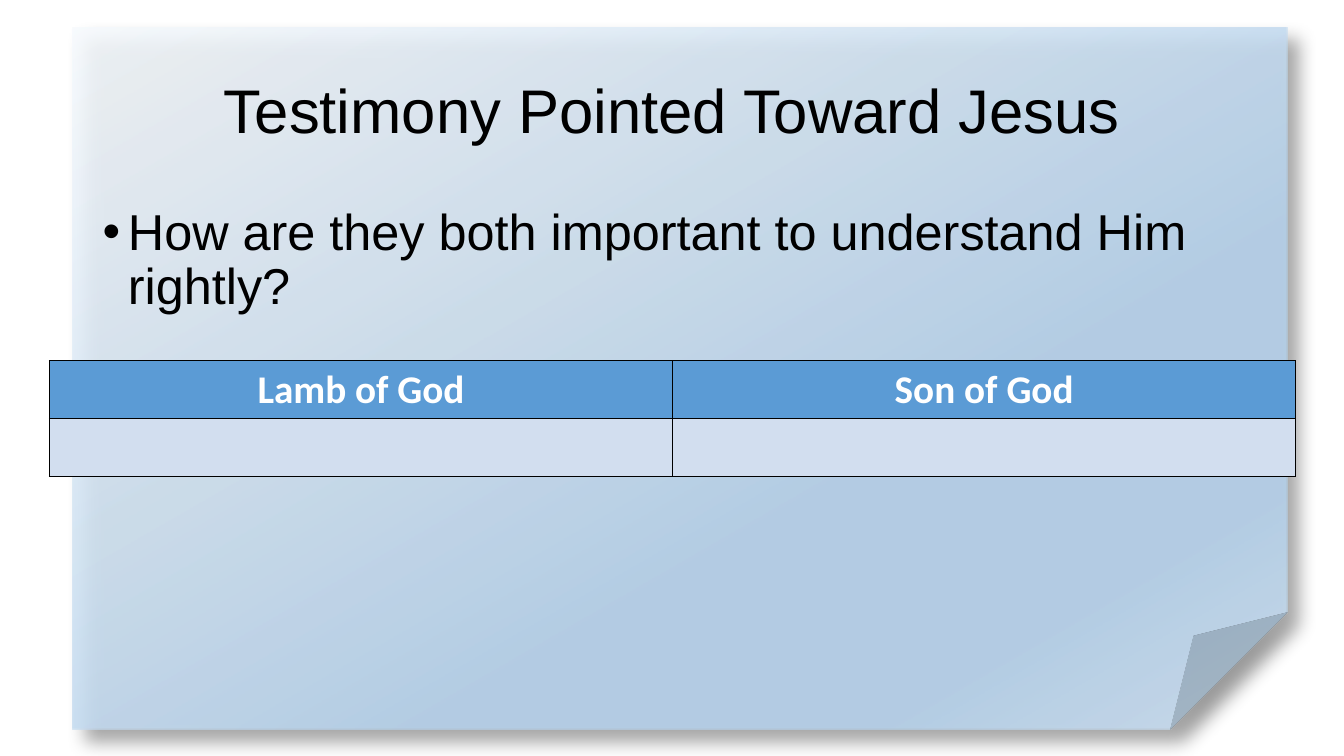
from lxml import etree
from pptx import Presentation
from pptx import util as u
from pptx.dml import color
from pptx.enum import shapes, text
from pptx.oxml import ns

COLORS = {
    "ink": "000000", "white": "FFFFFF", "header": "5B9BD5", "row": "D2DEEF",
    "pale": "F7FAFD", "sky": "B5D2EC", "mist": "CEE1F2",
}
PX = 9144


def px(*lengths):
    return [u.Emu(length * PX) for length in lengths]


def add(parent, tag, **attributes):
    return etree.SubElement(parent, ns.qn(tag), {k: str(v) for k, v in attributes.items()})


class SlideBuilder:
    """Adds styled elements to the current slide."""

    heading_font = "Arial"
    table_font = "Calibri"

    def __init__(self, slide):
        self.slide = slide

    def rgb(self, name):
        return color.RGBColor.from_string(COLORS[name])

    def tint(self, parent, name, alpha):
        tone = add(parent, "a:srgbClr", val=COLORS[name])
        add(tone, "a:alpha", val=alpha * 1000)

    def style(self, paragraph, size, font, tone, bold=False):
        paragraph.font.size = u.Pt(size)
        paragraph.font.name = font
        paragraph.font.bold = bold
        paragraph.font.color.rgb = self.rgb(tone)

    def folded_page(self, box, stops, angle, alpha):
        page = self.slide.shapes.add_shape(shapes.MSO_SHAPE.FOLDED_CORNER, *px(*box))
        page.line.fill.background()
        page.fill.gradient()
        page.fill.gradient_angle = 360 - angle
        properties = page._element.spPr
        stop_list = properties.find(".//" + ns.qn("a:gsLst"))
        for old_stop in list(stop_list):
            stop_list.remove(old_stop)
        for position, tone in stops:
            self.tint(add(stop_list, "a:gs", pos=position * 1000), tone, alpha)
        effects = add(properties, "a:effectLst")
        shadow = add(effects, "a:outerShdw", blurRad=u.Pt(13), dist=u.Pt(13),
                     dir=45 * 60000, algn="tl", rotWithShape=0)
        self.tint(shadow, "ink", 40)

    def text_box(self, box, words, size, centered=False, bullet=False):
        frame = self.slide.shapes.add_textbox(*px(*box)).text_frame
        frame.word_wrap = True
        paragraph = frame.paragraphs[0]
        paragraph.text = words
        paragraph.line_spacing = 0.9
        if centered:
            frame.vertical_anchor = text.MSO_ANCHOR.MIDDLE
            paragraph.alignment = text.PP_ALIGN.CENTER
        if bullet:
            properties = paragraph._p.get_or_add_pPr()
            properties.set("marL", str(u.Inches(0.25)))
            properties.set("indent", str(-u.Inches(0.25)))
            add(properties, "a:buFont", typeface=self.heading_font)
            add(properties, "a:buChar", char="•")
        self.style(paragraph, size, self.heading_font, "ink")

    def table(self, box, rows):
        grid = self.slide.shapes.add_table(len(rows), len(rows[0]), *px(*box)).table
        for row_index, row in enumerate(rows):
            for column_index, words in enumerate(row):
                cell = grid.cell(row_index, column_index)
                self.borders(cell)
                cell.fill.solid()
                cell.fill.fore_color.rgb = self.rgb("row" if row_index else "header")
                if words:
                    cell.text = words
                    paragraph = cell.text_frame.paragraphs[0]
                    paragraph.alignment = text.PP_ALIGN.CENTER
                    self.style(paragraph, 28, self.table_font, "white", bold=True)

    def borders(self, cell):
        properties = cell._tc.get_or_add_tcPr()
        for side in "LRTB":
            line = add(properties, f"a:ln{side}", w=u.Pt(1))
            self.tint(add(line, "a:solidFill"), "ink", 100)


def main():
    presentation = Presentation()
    presentation.slide_width, presentation.slide_height = px(1333, 750)
    builder = SlideBuilder(presentation.slides.add_slide(presentation.slide_layouts[6]))
    builder.folded_page((72, 27, 1205, 697),
                        [(0, "pale"), (64, "sky"), (83, "sky"), (100, "mist")],
                        angle=60, alpha=87)
    builder.text_box((92, 40, 1150, 145), "Testimony Pointed Toward Jesus", 44, centered=True)
    builder.text_box((92, 200, 1150, 476),
                     "How are they both important to understand Him rightly?", 36, bullet=True)
    builder.table((49, 358, 1236, 115), [("Lamb of God", "Son of God"), ("", "")])
    presentation.save("out.pptx")


if __name__ == "__main__":
    main()
